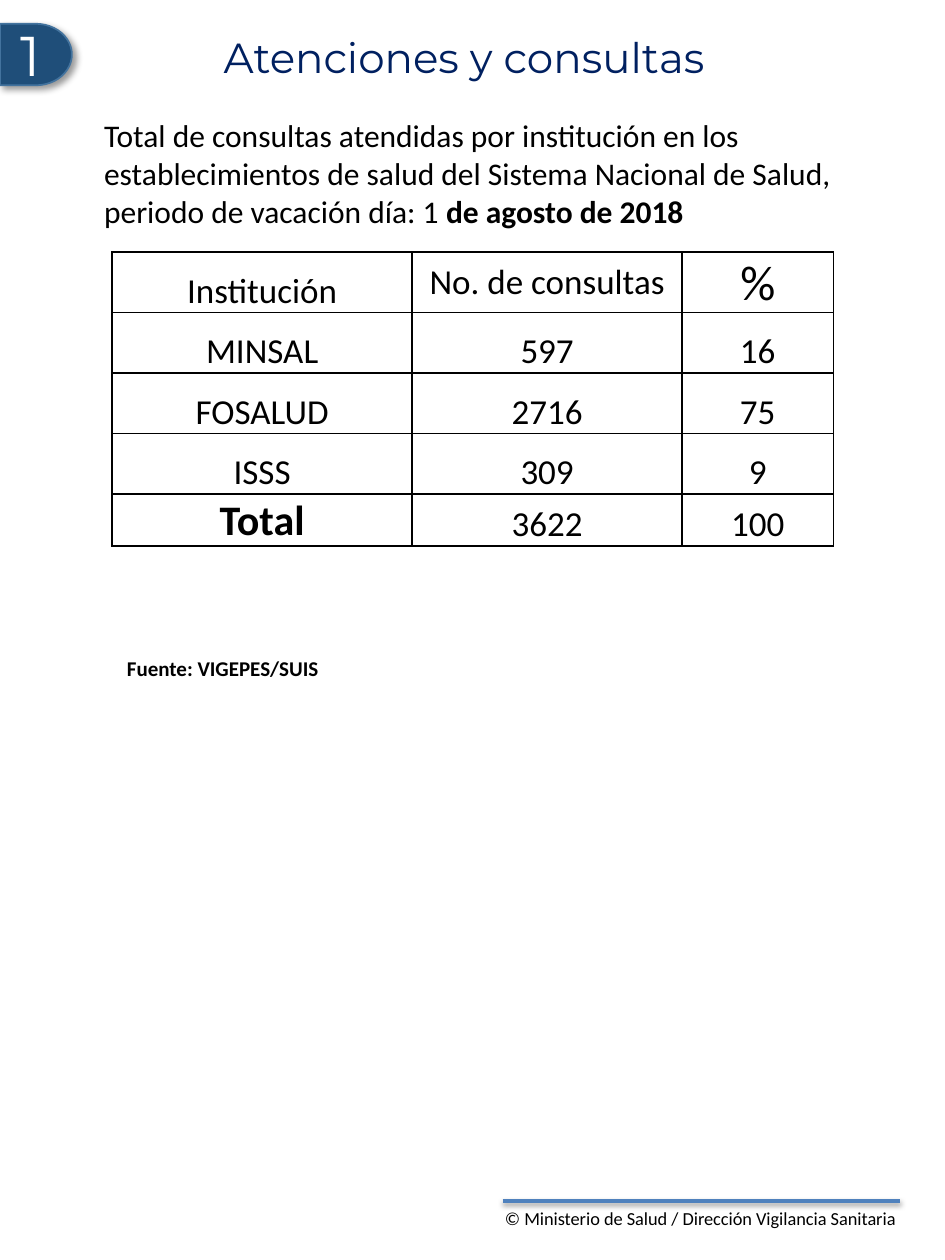
from lxml import etree
from pptx import Presentation
from pptx import util as u
from pptx.dml.color import RGBColor
from pptx.enum import shapes, text
from pptx.oxml import ns

MID = text.MSO_ANCHOR.MIDDLE
LOW = text.MSO_ANCHOR.BOTTOM
MAIN = text.PP_ALIGN.CENTER
LEFT = text.PP_ALIGN.LEFT


def hue(code):
    return RGBColor.from_string(code)


def sub(node, tag, **attrs):
    return etree.SubElement(node, ns.qn(tag), attrs)


def shade(item, alpha, blur, dist, angle):
    glow = sub(sub(item._element.spPr, "a:effectLst"), "a:outerShdw",
               blurRad=str(u.Pt(blur)), dist=str(u.Pt(dist)),
               dir=str(angle * 60000), rotWithShape="0")
    tint = sub(glow, "a:srgbClr", val="000000")
    sub(tint, "a:alpha", val=str(alpha * 1000))


def write(frame, *runs, size=18, font="Calibri", color="000000",
          bold=False, align=LEFT):
    para = frame.paragraphs[0]
    para.alignment = align
    for part in runs:
        words, heavy = part if isinstance(part, tuple) else (part, bold)
        run = para.add_run()
        run.text = words
        run.font.size = u.Pt(size)
        run.font.name = font
        run.font.bold = heavy
        run.font.color.rgb = hue(color)


class Page:
    navy, blue, edge, rule = "002060", "1F4E79", "43739E", "4F81BD"
    head = "Montserrat"

    def __init__(self, deck):
        self.items = deck.slides.add_slide(deck.slide_layouts[6]).shapes

    def label(self, box, *runs, wrap=True, anchor=text.MSO_ANCHOR.TOP,
              pad=0.13, **style):
        frame = self.items.add_textbox(*map(u.Cm, box)).text_frame
        frame.word_wrap = wrap
        frame.vertical_anchor = anchor
        frame.margin_top = frame.margin_bottom = u.Cm(pad)
        write(frame, *runs, **style)

    def line(self, *ends):
        rule = self.items.add_connector(
            shapes.MSO_CONNECTOR.STRAIGHT, *map(u.Cm, ends))
        rule.line.color.rgb = hue(self.rule)
        rule.line.width = u.Pt(2)
        shade(rule, 38, 3.1, 1.6, 90)

    def badge(self, box, mark):
        tab = self.items.add_shape(
            shapes.MSO_SHAPE.FLOWCHART_DELAY, *map(u.Cm, box))
        tab.fill.solid()
        tab.fill.fore_color.rgb = hue(self.blue)
        tab.line.color.rgb = hue(self.edge)
        tab.line.width = u.Pt(1)
        shade(tab, 40, 4, 3, 45)
        tab.text_frame.vertical_anchor = MID
        write(tab.text_frame, mark, size=32, font=self.head,
              color="FFFFFF", align=MAIN)

    def border(self, cell):
        props = cell._tc.get_or_add_tcPr()
        for spot, side in enumerate("LRTB"):
            edge = etree.Element(ns.qn("a:ln" + side), w=str(u.Pt(1)))
            sub(sub(edge, "a:solidFill"), "a:srgbClr", val="000000")
            props.insert(spot, edge)

    def table(self, left, top, cols, rows, data, sizes, mids):
        grid = self.items.add_table(
            len(rows), len(cols), u.Cm(left), u.Cm(top),
            u.Cm(sum(cols)), u.Cm(sum(rows))).table
        grid.first_row = grid.horz_banding = False
        for col, width in zip(grid.columns, cols):
            col.width = u.Cm(width)
        for r, (row, high) in enumerate(zip(data, rows)):
            grid.rows[r].height = u.Cm(high)
            for c, words in enumerate(row):
                cell = grid.cell(r, c)
                cell.fill.background()
                cell.margin_left = cell.margin_right = u.Cm(0.03)
                cell.margin_top, cell.margin_bottom = u.Cm(0.03), 0
                cell.vertical_anchor = MID if words in mids else LOW
                write(cell.text_frame, words, size=sizes.get(words, 20),
                      bold=words == "Total", align=MAIN)
                self.border(cell)


def main():
    deck = Presentation()
    deck.slide_width, deck.slide_height = u.Cm(19.05), u.Cm(25.4)
    page = Page(deck)
    page.line(10.13, 24.21, 18.14, 24.21)
    page.label((9.93, 24.21, 8.53, 1.14),
               "© Ministerio de Salud / Dirección Vigilancia Sanitaria",
               size=10.5, wrap=False)
    page.label((1.47, 0.58, 15.77, 1.12), "Atenciones y consultas",
               size=24, font=page.head, color=page.navy, align=MAIN,
               anchor=MID, pad=0.25)
    page.badge((0, 0.48, 1.45, 1.24), "1")
    data = [
        ("Institución", "No. de consultas", "%"),
        ("MINSAL", "597", "16"),
        ("FOSALUD", "2716", "75"),
        ("ISSS", "309", "9"),
        ("Total", "3622", "100"),
    ]
    page.table(2.26, 5.08, (6.05, 5.44, 3.05), [1.22] * 4 + [0.71], data,
               sizes={"%": 28, "Total": 24}, mids=data[0][1:])
    page.label((1.85, 2.21, 15.34, 2.57),
               "Total de consultas atendidas por institución en los "
               "establecimientos de salud del Sistema Nacional de Salud, "
               "periodo de vacación día: 1 ",
               ("de agosto de 2018", True))
    page.label((2.31, 13.08, 7.21, 0.76), "Fuente: VIGEPES/SUIS",
               size=12, bold=True)
    deck.save("out.pptx")


if __name__ == "__main__":
    main()
